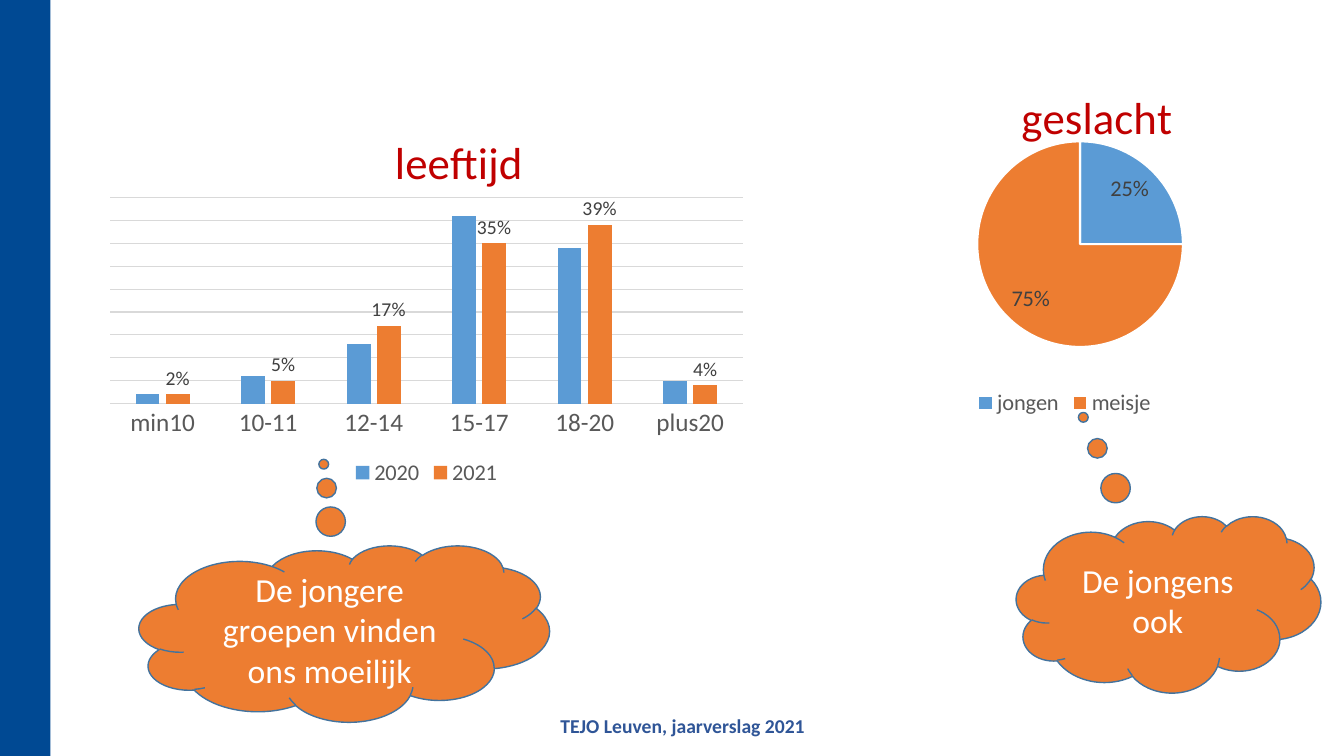
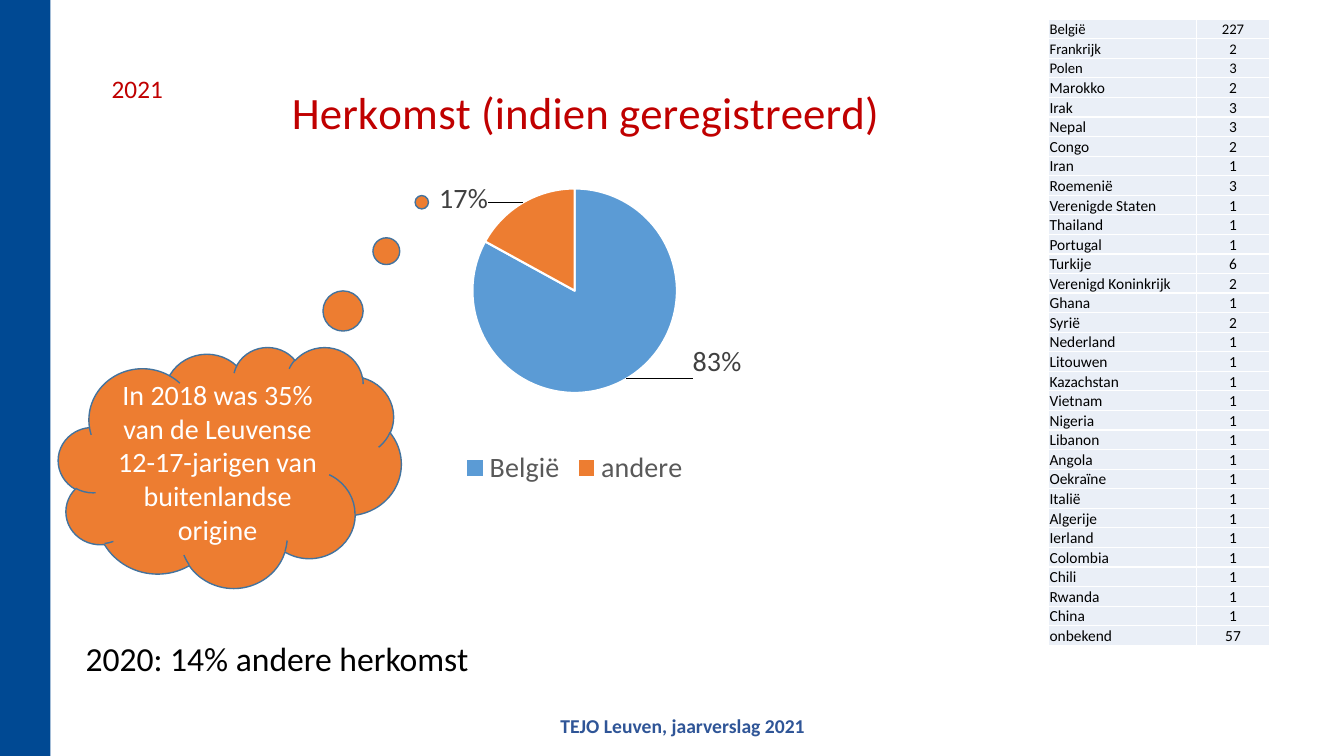
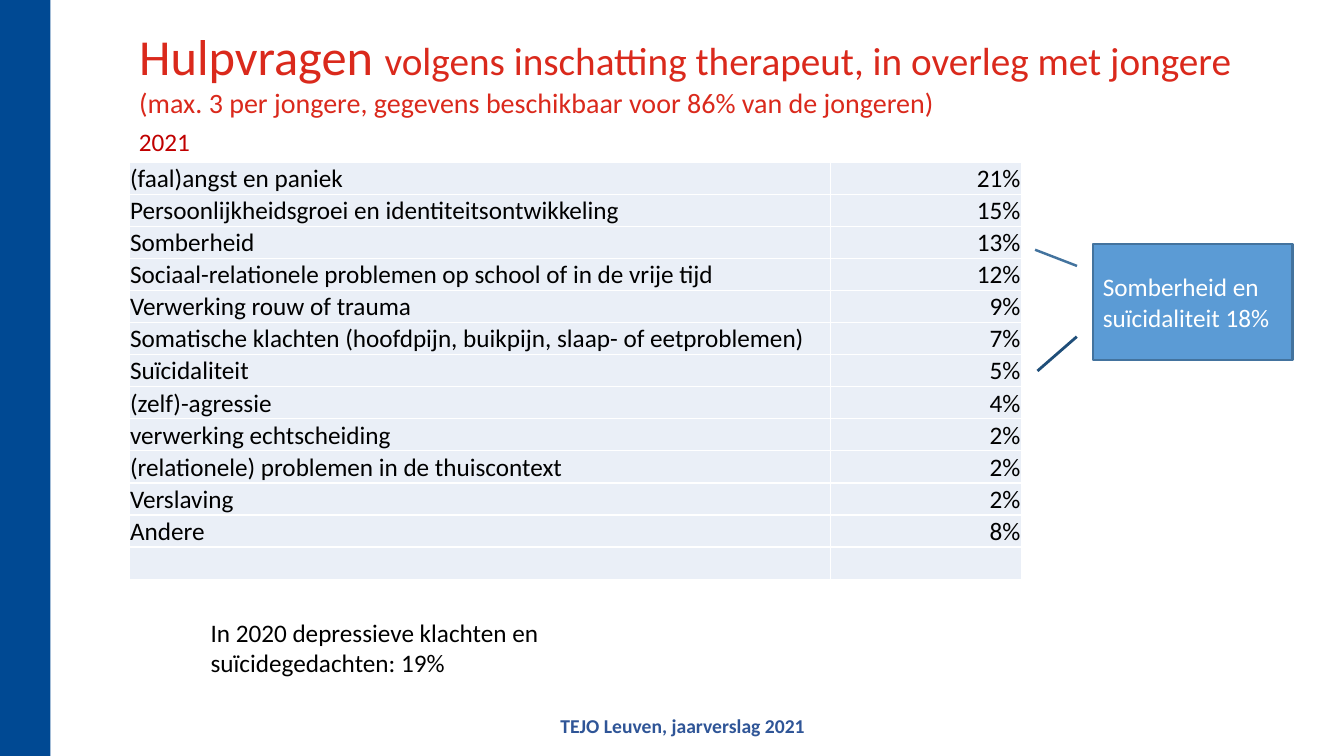
from lxml.etree import SubElement
from pptx import Presentation
from pptx.chart.data import CategoryChartData
from pptx.dml.color import RGBColor
from pptx.enum.chart import XL_CHART_TYPE, XL_LABEL_POSITION, XL_LEGEND_POSITION, XL_TICK_MARK
from pptx.enum.shapes import MSO_CONNECTOR, MSO_SHAPE
from pptx.enum.text import MSO_ANCHOR, PP_ALIGN
from pptx.oxml import parse_xml
from pptx.oxml.ns import nsdecls, qn
from pptx.util import Inches, Pt

FONT = "Calibri"
BAND_BLUE = RGBColor(0x00, 0x49, 0x93)
FOOTER_BLUE = RGBColor(0x2F, 0x55, 0x97)
BLUE = RGBColor(0x5B, 0x9B, 0xD5)
ORANGE = RGBColor(0xED, 0x7D, 0x31)
OUTLINE = RGBColor(0x43, 0x73, 0x9E)
DARK_BLUE = RGBColor(0x1F, 0x4E, 0x79)
RED = RGBColor(0xC0, 0x00, 0x00)
TITLE_RED = RGBColor(0xDA, 0x29, 0x1C)
BLACK = RGBColor(0x00, 0x00, 0x00)
WHITE = RGBColor(0xFF, 0xFF, 0xFF)
LABEL_GRAY = RGBColor(0x40, 0x40, 0x40)
AXIS_GRAY = RGBColor(0x59, 0x59, 0x59)
GRID_GRAY = RGBColor(0xD9, 0xD9, 0xD9)
CELL_FILL = RGBColor(0xEA, 0xEF, 0xF7)

TITLE_ONLY, BLANK = 5, 6

ORIGINS = [
    ("België", 227), ("Frankrijk", 2), ("Polen", 3), ("Marokko", 2),
    ("Irak", 3), ("Nepal", 3), ("Congo", 2), ("Iran", 1),
    ("Roemenië", 3), ("Verenigde Staten", 1), ("Thailand", 1), ("Portugal", 1),
    ("Turkije", 6), ("Verenigd Koninkrijk", 2), ("Ghana", 1), ("Syrië", 2),
    ("Nederland", 1), ("Litouwen", 1), ("Kazachstan", 1), ("Vietnam", 1),
    ("Nigeria", 1), ("Libanon", 1), ("Angola", 1), ("Oekraïne", 1),
    ("Italië", 1), ("Algerije", 1), ("Ierland", 1), ("Colombia", 1),
    ("Chili", 1), ("Rwanda", 1), ("China", 1), ("onbekend", 57),
]

REQUESTS = [
    ("(faal)angst en paniek", "21%"),
    ("Persoonlijkheidsgroei en identiteitsontwikkeling", "15%"),
    ("Somberheid", "13%"),
    ("Sociaal-relationele problemen op school of in de vrije tijd", "12%"),
    ("Verwerking rouw of trauma", "9%"),
    ("Somatische klachten (hoofdpijn, buikpijn, slaap- of eetproblemen)", "7%"),
    ("Suïcidaliteit", "5%"),
    ("(zelf)-agressie", "4%"),
    ("verwerking echtscheiding", "2%"),
    ("(relationele) problemen in de thuiscontext", "2%"),
    ("Verslaving", "2%"),
    ("Andere", "8%"),
    ("", ""),
]


def inches(box):
    return [Inches(value) for value in box]


def set_font(font, size, color, bold=False):
    font.name = FONT
    font.size = Pt(size)
    font.bold = bold
    font.color.rgb = color


def add_text(slide, box, text, size, color=BLACK, bold=False):
    shape = slide.shapes.add_textbox(*inches(box))
    shape.text_frame.word_wrap = True
    paragraph = shape.text_frame.paragraphs[0]
    paragraph.text = text
    set_font(paragraph.font, size, color, bold)
    return shape


def add_callout(slide, kind, box, adjustments, fill, line_width, text, size, alignment):
    shape = slide.shapes.add_shape(kind, *inches(box))
    shape.shadow.inherit = False
    for index, value in enumerate(adjustments):
        shape.adjustments[index] = value
    shape.fill.solid()
    shape.fill.fore_color.rgb = fill
    shape.line.color.rgb = OUTLINE
    shape.line.width = Pt(line_width)
    shape.text_frame.vertical_anchor = MSO_ANCHOR.MIDDLE
    paragraph = shape.text_frame.paragraphs[0]
    paragraph.text = text
    paragraph.alignment = alignment
    set_font(paragraph.font, size, WHITE)


def add_cloud(slide, box, tail, text, size):
    add_callout(slide, MSO_SHAPE.CLOUD_CALLOUT, box, tail, ORANGE, 1, text, size, PP_ALIGN.CENTER)


def add_table(slide, box, column_widths, rows, sizes, value_alignment):
    frame = slide.shapes.add_table(len(rows), len(column_widths), *inches(box))
    table = frame.table
    table.first_row = False
    table.horz_banding = False
    for column, width in zip(table.columns, column_widths):
        column.width = Inches(width)
    for row, values, size in zip(table.rows, rows, sizes):
        row.height = Inches(box[3] / len(rows))
        for cell, value, alignment in zip(row.cells, values, (PP_ALIGN.LEFT, value_alignment)):
            cell.fill.solid()
            cell.fill.fore_color.rgb = CELL_FILL
            cell.vertical_anchor = MSO_ANCHOR.BOTTOM
            cell.margin_left = cell.margin_right = cell.margin_top = Inches(0.01)
            cell.margin_bottom = 0
            paragraph = cell.text_frame.paragraphs[0]
            paragraph.text = str(value)
            paragraph.alignment = alignment
            set_font(paragraph.font, size, BLACK)


def set_layout(parent, index, **settings):
    for layout in parent.findall(qn("c:layout")):
        parent.remove(layout)
    layout = parse_xml(f"<c:layout {nsdecls('c')}><c:manualLayout/></c:layout>")
    for name, value in settings.items():
        SubElement(layout[0], qn(f"c:{name}")).set("val", str(value))
    parent.insert(index, layout)


def add_chart(slide, kind, box, title, title_place, plot_place, categories, series, legend_size):
    data = CategoryChartData(number_format="0%")
    data.categories = categories
    for name, values in series:
        data.add_series(name, values)
    chart = slide.shapes.add_chart(kind, *inches(box), data).chart
    set_font(chart.font, 10, BLACK)
    chart.has_title = True
    paragraph = chart.chart_title.text_frame.paragraphs[0]
    paragraph.text = title
    set_font(paragraph.font, 32, RED)
    x, y = title_place
    set_layout(chart.element.xpath(".//c:title")[0], 1, xMode="edge", yMode="edge", x=x, y=y)
    x, y, width, height = plot_place
    set_layout(chart.element.xpath(".//c:plotArea")[0], 0, layoutTarget="inner",
               xMode="edge", yMode="edge", x=x, y=y, w=width, h=height)
    chart.has_legend = True
    chart.legend.position = XL_LEGEND_POSITION.BOTTOM
    chart.legend.include_in_layout = False
    set_font(chart.legend.font, legend_size, AXIS_GRAY)
    return chart


def show_values(series, size, position):
    labels = series.data_labels
    labels.show_value = True
    labels.number_format = "0%"
    labels.number_format_is_linked = False
    labels.position = position
    set_font(labels.font, size, LABEL_GRAY)


def add_pie(slide, box, title, title_place, plot_place, shares, size, label_offsets=()):
    chart = add_chart(slide, XL_CHART_TYPE.PIE, box, title, title_place, plot_place,
                      list(shares), [("Series 1", list(shares.values()))], size)
    chart.plots[0].vary_by_categories = True
    series = chart.plots[0].series[0]
    for index, color in enumerate((BLUE, ORANGE)):
        slice_format = series.points[index].format
        slice_format.fill.solid()
        slice_format.fill.fore_color.rgb = color
        slice_format.line.color.rgb = WHITE
        slice_format.line.width = Pt(1.5)
    position = XL_LABEL_POSITION.OUTSIDE_END if label_offsets else XL_LABEL_POSITION.INSIDE_END
    show_values(series, size, position)
    for index, (x, y) in enumerate(label_offsets):
        label = series.points[index].data_label
        label.position = position
        set_font(label.font, size, LABEL_GRAY)
        set_layout(chart.element.xpath(".//c:dLbl")[index], 1, x=x, y=y)


def add_age_chart(slide):
    chart = add_chart(
        slide, XL_CHART_TYPE.COLUMN_CLUSTERED, (0.96, 0.94, 6.54, 3.93),
        "leeftijd", (0.44, 0.07), (0.02, 0.26, 0.96, 0.52),
        ["min10", "10-11", "12-14", "15-17", "18-20", "plus20"],
        [("2020", (0.02, 0.06, 0.13, 0.41, 0.34, 0.05)),
         ("2021", (0.02, 0.05, 0.17, 0.35, 0.39, 0.04))], 16)
    plot = chart.plots[0]
    plot.vary_by_categories = False
    plot.gap_width = 219
    plot.overlap = -27
    for series, color in zip(plot.series, (BLUE, ORANGE)):
        series.format.fill.solid()
        series.format.fill.fore_color.rgb = color
    show_values(plot.series[1], 14, XL_LABEL_POSITION.OUTSIDE_END)
    category_axis = chart.category_axis
    category_axis.major_tick_mark = XL_TICK_MARK.NONE
    set_font(category_axis.tick_labels.font, 18, AXIS_GRAY)
    value_axis = chart.value_axis
    value_axis.visible = False
    value_axis.minimum_scale = 0
    value_axis.maximum_scale = 0.45
    value_axis.major_unit = 0.05
    for line in (category_axis.format.line, value_axis.major_gridlines.format.line):
        line.color.rgb = GRID_GRAY
        line.width = Pt(0.75)


def add_line(slide, start, end):
    connector = slide.shapes.add_connector(MSO_CONNECTOR.STRAIGHT, *inches(start + end))
    connector.line.color.rgb = DARK_BLUE
    connector.line.width = Pt(2)
    SubElement(connector.element.spPr, qn("a:effectLst"))


def set_title(slide, box, lines):
    title = slide.shapes.title
    title.left, title.top, title.width, title.height = inches(box)
    frame = title.text_frame
    frame.word_wrap = True
    frame.vertical_anchor = MSO_ANCHOR.TOP
    for index, runs in enumerate(lines):
        paragraph = frame.add_paragraph() if index else frame.paragraphs[0]
        paragraph.alignment = PP_ALIGN.LEFT
        for text, size in runs:
            run = paragraph.add_run()
            run.text = text
            set_font(run.font, size, TITLE_RED)


def decorate_master(presentation, slide):
    band = slide.shapes.add_shape(MSO_SHAPE.RECTANGLE, 0, 0, Inches(0.5), presentation.slide_height)
    band.shadow.inherit = False
    band.fill.solid()
    band.fill.fore_color.rgb = BAND_BLUE
    band.line.fill.background()
    footer = add_text(slide, (5.46, 7.03, 2.67, 0.34), "TEJO Leuven, jaarverslag 2021",
                      14, FOOTER_BLUE, bold=True)
    for shape in (band, footer):
        presentation.slide_master.element.cSld.spTree.append(shape.element)


def build_age_and_gender(slide):
    add_pie(slide, (8.01, 0.63, 5.1, 3.55), "geslacht", (0.4, 0.04), (0.33, 0.17, 0.4, 0.67),
            {"jongen": 0.25, "meisje": 0.75}, 16)
    add_age_chart(slide)
    add_cloud(slide, (1.38, 5.41, 4.07, 1.75), (-0.05, -0.96),
              "De jongere groepen vinden ons moeilijk", 24)
    add_cloud(slide, (10.08, 5.12, 3.02, 1.75), (-0.28, -1.06), "De jongens ook", 24)


def build_origin(slide):
    add_text(slide, (0.75, 6.28, 5.42, 0.5), "2020: 14% andere herkomst", 24)
    add_pie(slide, (1.8, 0.46, 7.8, 4.41), "Herkomst (indien geregistreerd)", (0.13, 0.06),
            (0.37, 0.32, 0.26, 0.46), {"België": 0.83, "andere": 0.17}, 20,
            [(0.08, -0.09), (-0.04, 0.04)])
    add_cloud(slide, (0.58, 3.44, 3.4, 2.39), (0.56, -1.1),
              "In 2018 was 35% van de Leuvense 12-17-jarigen van buitenlandse origine", 20)
    add_table(slide, (10.4, 0.19, 2.19, 6.22), (1.47, 0.72), ORIGINS,
              [10.5] * 3 + [11] * (len(ORIGINS) - 3), PP_ALIGN.CENTER)
    add_text(slide, (1.01, 0.68, 0.78, 0.4), "2021", 18, RED)


def build_requests(slide):
    set_title(slide, (1.28, 0.2, 11.63, 1.35), [
        [("Hulpvragen ", 36), ("volgens inschatting therapeut, in overleg met jongere", 28)],
        [("(max. 3 per jongere, gegevens beschikbaar voor 86% van de jongeren)", 20)],
    ])
    add_table(slide, (1.28, 1.61, 8.85, 4.14), (6.96, 1.89), REQUESTS,
              [18] * len(REQUESTS), PP_ALIGN.RIGHT)
    add_callout(slide, MSO_SHAPE.LINE_CALLOUT_1, (10.84, 2.42, 1.98, 1.15),
                (0.19, -0.08, 0.05, -0.29), BLUE, 1.75,
                "Somberheid en suïcidaliteit 18%", 18, PP_ALIGN.LEFT)
    add_line(slide, (10.29, 3.68), (10.68, 3.34))
    add_text(slide, (1.99, 6.07, 3.58, 0.71),
             "In 2020 depressieve klachten en suïcidegedachten: 19%", 18)
    add_text(slide, (1.28, 1.2, 0.78, 0.4), "2021", 18, RED)


def main():
    presentation = Presentation()
    presentation.slide_width = Inches(13.33)
    presentation.slide_height = Inches(7.5)
    layouts = presentation.slide_layouts
    age_slide, origin_slide, request_slide = [
        presentation.slides.add_slide(layouts[index]) for index in (BLANK, BLANK, TITLE_ONLY)]
    decorate_master(presentation, age_slide)
    build_age_and_gender(age_slide)
    build_origin(origin_slide)
    build_requests(request_slide)
    presentation.save("out.pptx")


if __name__ == "__main__":
    main()
